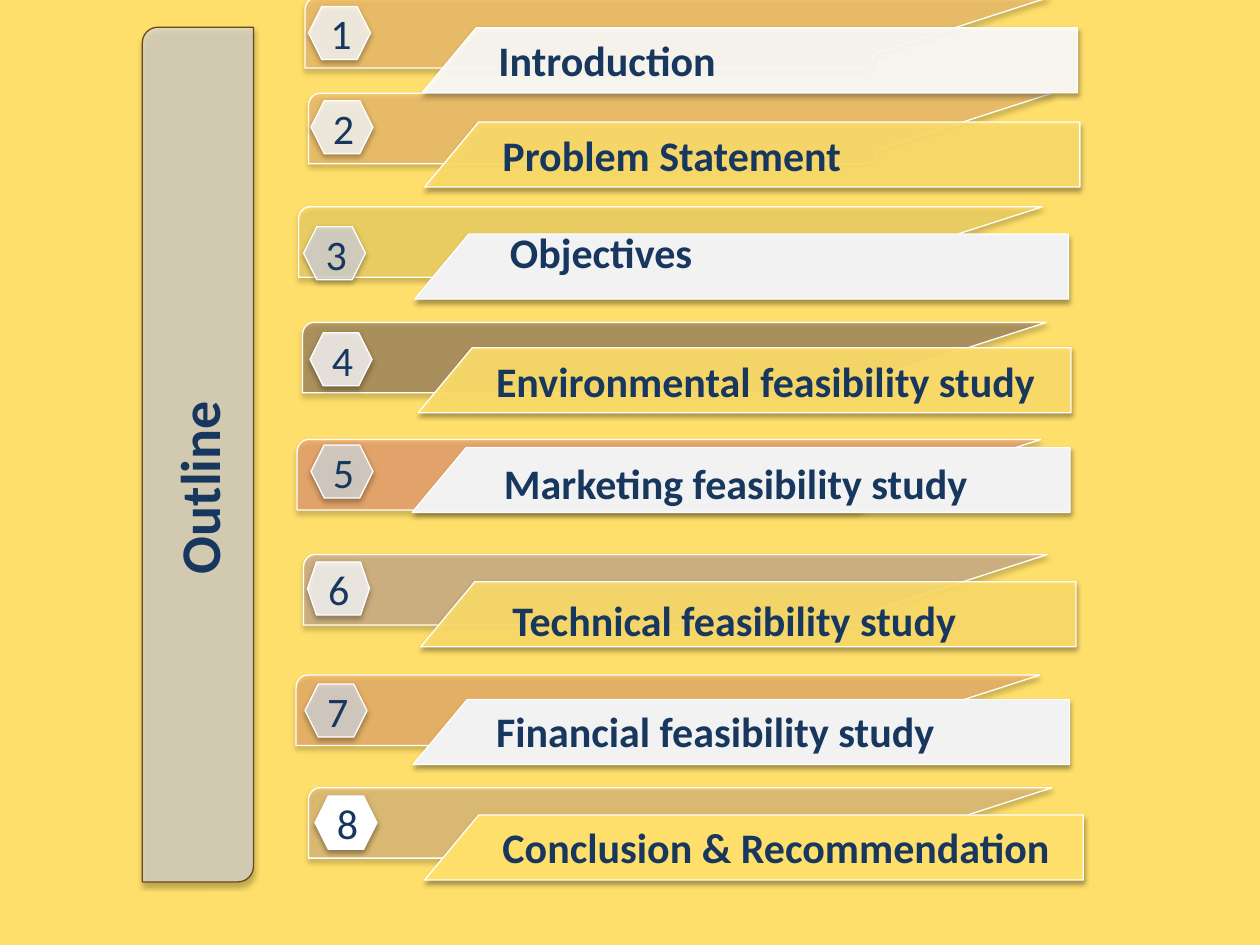
"""Build the study outline slide with eight numbered banners."""
import math
from dataclasses import dataclass
from typing import NamedTuple

from lxml import etree
from pptx import Presentation
from pptx import util as u
from pptx.dml.color import RGBColor
from pptx.enum import shapes, text
from pptx.oxml import ns


class Paint(NamedTuple):
    colour: str
    opacity: int = 100


@dataclass(frozen=True)
class Theme:
    font: str = "Calibri"
    ink: str = "17375E"
    background: str = "FFDF6B"
    outline: str = "FFFFFF"
    strip_outline: str = "6B471B"
    strip: Paint = Paint("D9D9D9", 70)
    white: Paint = Paint("FFFFFF", 80)
    grey: Paint = Paint("D9D9D9", 80)
    pale: Paint = Paint("F2F2F2")
    gold: Paint = Paint("FFDF6B", 90)
    title_size: int = 32
    body_size: int = 24
    line_width: float = 0.75


THEME = Theme()
BAND_WIDTH, BAND_HEIGHT = 14.99, 1.42
PANEL_HEIGHT, PANEL_SLANT = 1.31, 1.09
BADGE_WIDTH, BADGE_HEIGHT = 1.25, 1.07
LABEL_HEIGHT = 1.27


class Spot(NamedTuple):
    left: float
    top: float
    width: float = 0


class Topic(NamedTuple):
    title: str
    band: Spot
    band_paint: Paint
    panel: Spot
    panel_paint: Paint
    badge: Spot
    badge_paint: Paint
    label: Spot
    badge_inset: float = 0.25


TOPICS = [
    Topic("Introduction", Spot(6.15, -0.05), Paint("FBBE77", 50),
          Spot(8.51, 0.56, 13.21), Paint("FFFFFF", 90),
          Spot(6.22, 0.13), THEME.white, Spot(9.8, 0.58, 4.93)),
    Topic("Problem Statement", Spot(6.22, 1.88), Paint("FBBE77", 50),
          Spot(8.56, 2.46, 13.21), THEME.gold,
          Spot(6.27, 2.03), THEME.white, Spot(9.88, 2.49, 7.42)),
    Topic("Objectives", Spot(6.02, 4.17), Paint("FFDF6B", 50),
          Spot(8.36, 4.72, 13.18), THEME.pale,
          Spot(6.12, 4.57), THEME.grey, Spot(10.03, 4.44, 4.24)),
    Topic("Environmental feasibility study", Spot(6.1, 6.5), Paint("82695E", 50),
          Spot(8.43, 7.01, 13.16), Paint("FFDF6B", 92),
          Spot(6.25, 6.71), THEME.white, Spot(9.75, 7.04, 11.89)),
    Topic("Marketing feasibility study", Spot(5.99, 8.86), Paint("F0917B", 50),
          Spot(8.31, 9.02, 13.26), THEME.pale,
          Spot(6.27, 8.97), THEME.grey, Spot(9.91, 9.09, 10.16)),
    Topic("Technical feasibility study", Spot(6.12, 11.18), Paint("C4A6A6", 50),
          Spot(8.48, 11.73, 13.21), THEME.gold,
          Spot(6.2, 11.33), THEME.white, Spot(10.08, 11.86, 9.75), 0.17),
    Topic("Financial feasibility study", Spot(5.97, 13.61), Paint("F4A973", 50),
          Spot(8.33, 14.1, 13.23), THEME.pale,
          Spot(6.15, 13.79), THEME.grey, Spot(9.75, 14.1, 9.63)),
    Topic("Conclusion & Recommendation", Spot(6.22, 15.88), Paint("E2BB8B", 52),
          Spot(8.56, 16.43, 13.28), Paint("FFDF6B"),
          Spot(6.35, 16.05), Paint("FFFFFF"), Spot(9.88, 16.43, 12.04)),
]


def dress(shape, paint: Paint, outline: str = THEME.outline) -> None:
    """Give a shape its fill, opacity, outline and soft drop shadow."""
    shape.fill.solid()
    shape.fill.fore_color.rgb = RGBColor.from_string(paint.colour)
    shape.line.color.rgb = RGBColor.from_string(outline)
    shape.line.width = u.Pt(THEME.line_width)
    shape.shadow.inherit = False
    properties = shape.element.spPr
    if paint.opacity < 100:
        colour = properties.find(ns.qn("a:solidFill"))[0]
        etree.SubElement(colour, ns.qn("a:alpha"), val=str(paint.opacity * 1000))
    shadow = etree.SubElement(
        properties.find(ns.qn("a:effectLst")), ns.qn("a:outerShdw"),
        blurRad=str(u.Pt(3.1)), dist=str(u.Pt(1.8)), dir="5400000", rotWithShape="0")
    shade = etree.SubElement(shadow, ns.qn("a:srgbClr"), val="000000")
    etree.SubElement(shade, ns.qn("a:alpha"), val="35000")


def write(shape, words: str, size: int, bold: bool = False) -> None:
    """Put one styled line of text in a shape."""
    shape.text_frame.text = words
    font = shape.text_frame.paragraphs[0].runs[0].font
    font.name, font.size, font.bold = THEME.font, u.Pt(size), bold
    font.color.rgb = RGBColor.from_string(THEME.ink)


def add_label(slide, words: str, spot: Spot, height: float, size: int):
    """Add a bold, unwrapped heading."""
    label = slide.shapes.add_textbox(
        u.Cm(spot.left), u.Cm(spot.top), u.Cm(spot.width), u.Cm(height))
    write(label, words, size, bold=True)
    label.text_frame.word_wrap = False
    label.text_frame.auto_size = text.MSO_AUTO_SIZE.SHAPE_TO_FIT_TEXT
    return label


def add_outline(slide, spot: Spot, corners: list[tuple[float, float]], paint: Paint) -> None:
    """Draw a closed outline whose corners are relative to its spot."""
    points = [(u.Cm(spot.left + x), u.Cm(spot.top + y)) for x, y in corners]
    builder = slide.shapes.build_freeform(*points[0])
    builder.add_line_segments(points[1:], close=True)
    dress(builder.convert_to_shape(), paint)


def arc(centre_x: float, centre_y: float, radius_x: float, radius_y: float,
        start: int) -> list[tuple[float, float]]:
    """Return points along a clockwise quarter ellipse."""
    angles = [math.radians(start + step) for step in range(0, 91, 15)]
    return [(centre_x + radius_x * math.cos(a), centre_y + radius_y * math.sin(a))
            for a in angles]


def add_topic(slide, number: int, topic: Topic) -> None:
    """Draw one numbered banner with its title."""
    band = [(BAND_WIDTH, 0), *arc(11.23, 1.14, 0.23, 0.28, 0),
            (0, BAND_HEIGHT), *arc(0.23, 0.25, 0.23, 0.25, 180)]
    add_outline(slide, topic.band, band, topic.band_paint)
    panel = [(PANEL_SLANT, 0), (topic.panel.width, 0),
             (topic.panel.width, PANEL_HEIGHT), (0, PANEL_HEIGHT)]
    add_outline(slide, topic.panel, panel, topic.panel_paint)

    badge = slide.shapes.add_shape(
        shapes.MSO_SHAPE.HEXAGON, u.Cm(topic.badge.left), u.Cm(topic.badge.top),
        u.Cm(BADGE_WIDTH), u.Cm(BADGE_HEIGHT))
    badge.adjustments[0] = topic.badge_inset
    dress(badge, topic.badge_paint)
    write(badge, str(number), THEME.body_size)
    badge.text_frame.vertical_anchor = text.MSO_ANCHOR.MIDDLE
    badge.text_frame.paragraphs[0].alignment = text.PP_ALIGN.CENTER
    add_label(slide, topic.title, topic.label, LABEL_HEIGHT, THEME.body_size)


def add_side_title(slide) -> None:
    """Draw the upright strip and its turned heading."""
    strip = slide.shapes.add_shape(
        shapes.MSO_SHAPE.ROUND_2_DIAG_RECTANGLE,
        u.Cm(2.87), u.Cm(0.55), u.Cm(2.24), u.Cm(17.23))
    strip.adjustments[0] = 0.14
    dress(strip, THEME.strip, THEME.strip_outline)
    heading = add_label(slide, "Outline", Spot(1.98, 8.99, 4.04), 1.63, THEME.title_size)
    heading.rotation = 270


def main() -> None:
    """Assemble and save the slide."""
    deck = Presentation()
    deck.slide_width, deck.slide_height = u.Cm(25.4), u.Cm(19.05)
    slide = deck.slides.add_slide(deck.slide_layouts[6])
    slide.background.fill.solid()
    slide.background.fill.fore_color.rgb = RGBColor.from_string(THEME.background)
    add_side_title(slide)
    for number, topic in reversed(list(enumerate(TOPICS, 1))):
        add_topic(slide, number, topic)
    deck.save("out.pptx")


if __name__ == "__main__":
    main()
